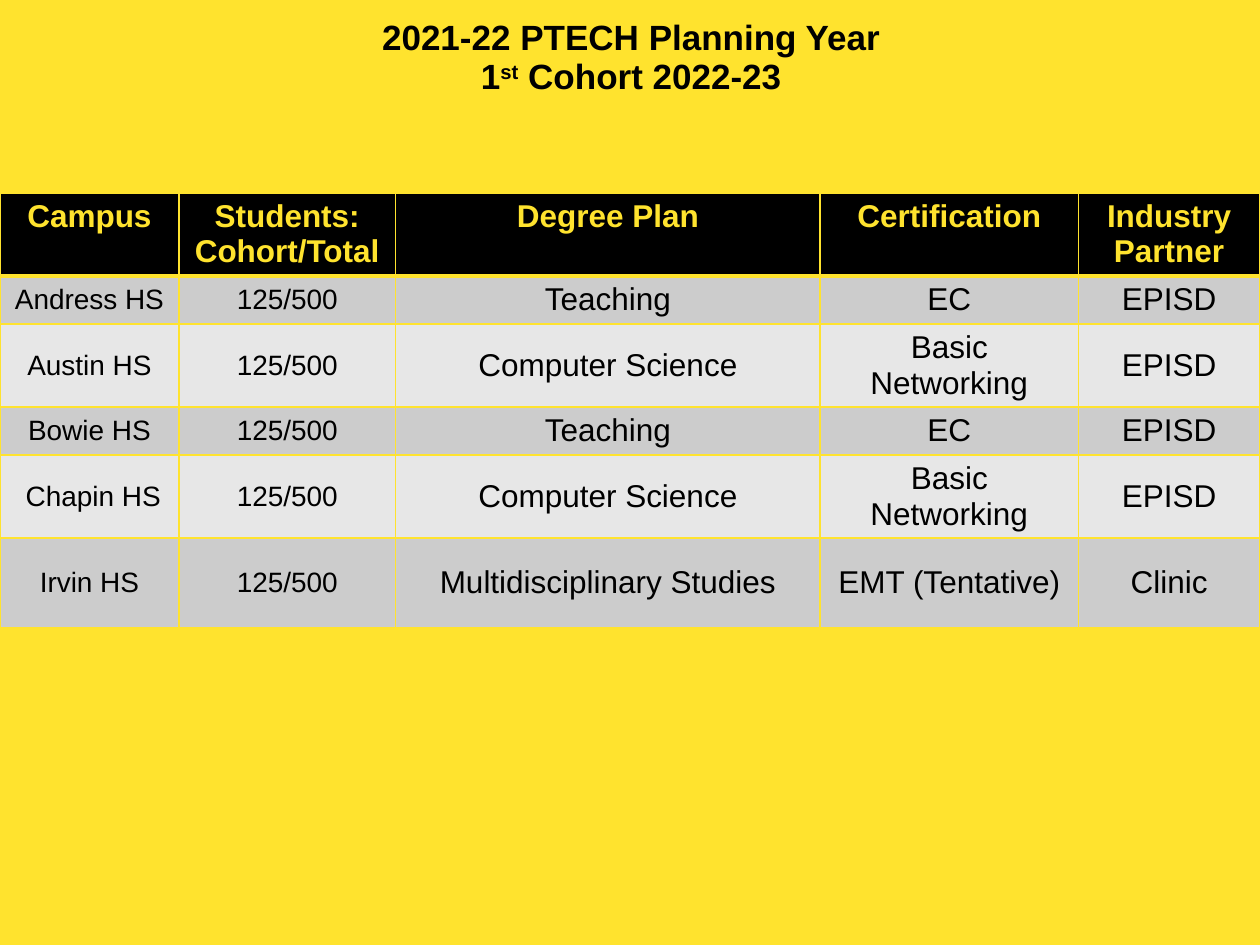
"""Builds the PTECH planning year slide with its table of campuses."""
import pptx
import pptx.util
import pptx.dml.color
import pptx.enum.text
import pptx.oxml
import pptx.oxml.ns

COLORS = {"yellow": "FFE32E", "black": "000000", "dark": "CCCCCC", "light": "E7E7E7"}
NO_STYLE = "{2D5ABB26-0587-4C30-8999-92F81FD0307C}"
Inches = pptx.util.Inches


def add_run(p, text, size, color, bold=False):
    r = p.add_run()
    r.text = text
    r.font.name = "Arial"
    r.font.size = pptx.util.Pt(size)
    r.font.bold = bold
    r.font.color.rgb = pptx.dml.color.RGBColor.from_string(COLORS[color])
    return r


def add_grid(slide, top, col_widths, row_heights):
    frame = slide.shapes.add_table(len(row_heights), len(col_widths), 0, Inches(top),
                                   Inches(sum(col_widths)), Inches(sum(row_heights)))
    table = frame.table
    table.first_row = table.horz_banding = False
    table._tbl.tblPr.find(pptx.oxml.ns.qn("a:tableStyleId")).text = NO_STYLE
    for column, width in zip(table.columns, col_widths):
        column.width = Inches(width)
    for row, height in zip(table.rows, row_heights):
        row.height = Inches(height)
    return table


prs = pptx.Presentation()
prs.slide_width, prs.slide_height = Inches(10), Inches(7.5)
s = prs.slides.add_slide(prs.slide_layouts[6])
s.background.fill.solid()
s.background.fill.fore_color.rgb = pptx.dml.color.RGBColor.from_string(COLORS["yellow"])

title = add_grid(s, 0.15, [10.02], [0.45]).cell(0, 0)
title.margin_left = title.margin_right = Inches(0.05)
title.margin_top = title.margin_bottom = 0
tf = title.text_frame
for i, texts in enumerate([["2021-22 PTECH Planning Year"], ["1", "st", " Cohort 2022-23"]]):
    p = tf.add_paragraph() if i else tf.paragraphs[0]
    p.alignment = pptx.enum.text.PP_ALIGN.CENTER
    for text in texts:
        r = add_run(p, text, 20, "black", True)
        if text == "st":
            r.font._element.set("baseline", "30000")

rows = [
    ["Campus", "Students: Cohort/Total", "Degree Plan", "Certification", "Industry Partner"],
    ["Andress HS", "125/500", "Teaching", "EC", "EPISD"],
    ["Austin HS", "125/500", "Computer Science", "Basic Networking", "EPISD"],
    ["Bowie HS", "125/500", "Teaching", "EC", "EPISD"],
    ["Chapin HS", "125/500", "Computer Science", "Basic Networking", "EPISD"],
    ["Irvin HS", "125/500", "Multidisciplinary Studies", "EMT (Tentative)", "Clinic"],
]
campuses = add_grid(s, 1.53, [1.42, 1.72, 3.37, 2.05, 1.44], [0.64] + [0.36] * 4 + [0.71])
for i, values in enumerate(rows):
    header = i == 0
    fill = "black" if header else "dark" if i % 2 else "light"
    for j, value in enumerate(values):
        cell = campuses.cell(i, j)
        tcPr = cell._tc.get_or_add_tcPr()
        for side in "LRTB":
            thick = (header and side == "B") or (i == 1 and side == "T")
            tcPr.append(pptx.oxml.parse_xml(
                f'<a:ln{side} {pptx.oxml.ns.nsdecls("a")} w="{38100 if thick else 12700}">'
                f'<a:solidFill><a:srgbClr val="{COLORS["yellow"]}"/></a:solidFill></a:ln{side}>'))
        cell.fill.solid()
        cell.fill.fore_color.rgb = pptx.dml.color.RGBColor.from_string(COLORS[fill])
        if not header:
            cell.vertical_anchor = pptx.enum.text.MSO_ANCHOR.MIDDLE
        p = cell.text_frame.paragraphs[0]
        p.alignment = pptx.enum.text.PP_ALIGN.CENTER
        size = 18 if header or j > 1 else 16
        add_run(p, value, size, "yellow" if header else "black", header)
campuses.cell(4, 0).margin_left = Inches(0.16)

prs.save("out.pptx")
